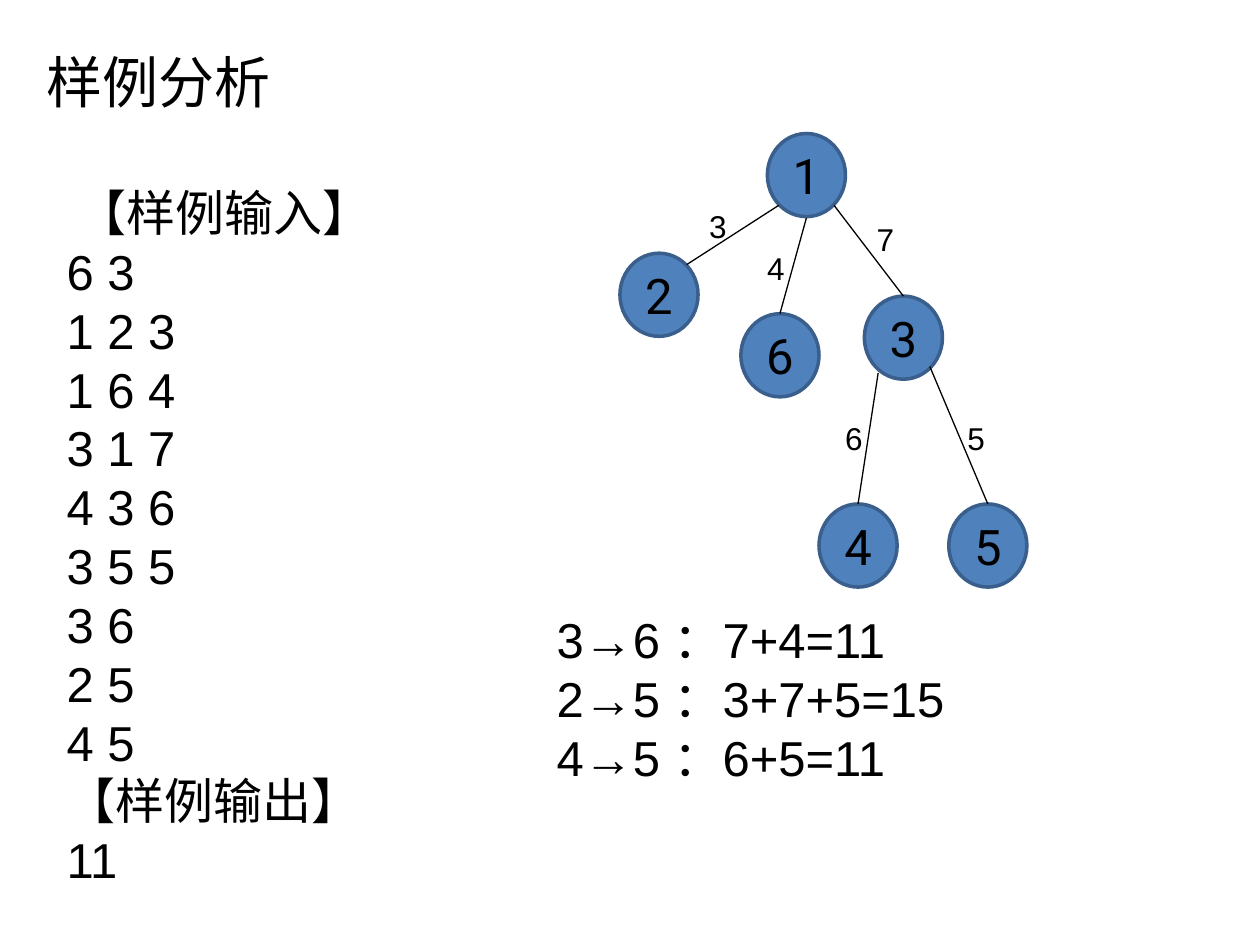
from pptx import Presentation
from pptx.dml.color import RGBColor
from pptx.enum.shapes import MSO_CONNECTOR, MSO_SHAPE
from pptx.enum.text import MSO_ANCHOR, MSO_AUTO_SIZE, PP_ALIGN
from pptx.oxml.ns import qn
from pptx.util import Inches, Pt
from lxml.etree import SubElement

INPUT_LINES = [
    " 【样例输入】", "6 3", "1 2 3", "1 6 4", "3 1 7", "4 3 6", "3 5 5",
    "3 6", "2 5", "4 5", "【样例输出】", "11",
]
ROUTE_LINES = ["3→6 ：7+4=11", "2→5 ：3+7+5=15", "4→5 ：6+5=11"]
NODES = [
    ("1", 6.09, 1.06), ("2", 4.92, 2.01), ("6", 5.88, 2.49),
    ("3", 6.86, 2.35), ("4", 6.5, 4), ("5", 7.53, 4),
]
EDGES = [
    (6.18, 1.63, 5.45, 2.1), (6.4, 1.73, 6.19, 2.49),
    (6.62, 1.63, 7.17, 2.35), (6.97, 2.96, 6.81, 4),
    (7.38, 2.91, 7.84, 4),
]
WEIGHTS = [
    ("3", 5.53, 1.59), ("4", 5.99, 1.93), ("7", 6.86, 1.7),
    ("6", 6.61, 3.28), ("5", 7.58, 3.28),
]


def color(value):
    return RGBColor.from_string(value)


class TreeSlide:
    """Draws text, tree nodes and edges on one slide in a shared style."""

    ink, node_fill, node_line = "000000", "4F81BD", "3A5F8C"
    text_font, node_font = "Arial", "Roboto"
    node_w, node_h = 0.62, 0.66

    def __init__(self, s):
        self.s = s

    def set_lines(self, tf, lines, size, font, align=PP_ALIGN.LEFT):
        tf.word_wrap = True
        for i, line in enumerate(lines):
            p = tf.paragraphs[0] if i == 0 else tf.add_paragraph()
            p.text = line
            p.alignment = align
            p.font.size = Pt(size)
            p.font.name = font
            p.font.color.rgb = color(self.ink)

    def text(self, lines, x, y, w, h, size=28):
        sp = self.s.shapes.add_textbox(Inches(x), Inches(y), Inches(w), Inches(h))
        self.set_lines(sp.text_frame, lines, size, self.text_font)
        sp.text_frame.auto_size = MSO_AUTO_SIZE.SHAPE_TO_FIT_TEXT

    def node(self, label, x, y):
        sp = self.s.shapes.add_shape(
            MSO_SHAPE.OVAL, Inches(x), Inches(y),
            Inches(self.node_w), Inches(self.node_h))
        sp.shadow.inherit = False
        sp.fill.solid()
        sp.fill.fore_color.rgb = color(self.node_fill)
        sp.line.color.rgb = color(self.node_line)
        sp.line.width = Pt(2)
        sp.text_frame.vertical_anchor = MSO_ANCHOR.MIDDLE
        self.set_lines(sp.text_frame, [label], 28, self.node_font, PP_ALIGN.CENTER)

    def edge(self, *ends):
        line = self.s.shapes.add_connector(
            MSO_CONNECTOR.STRAIGHT, *[Inches(v) for v in ends])
        line.line.color.rgb = color(self.ink)
        line.line.width = Pt(0.75)
        SubElement(line._element.spPr, qn("a:effectLst"))

    def weight(self, label, x, y):
        self.text([label], x, y, 0.41, 0.4, 18)


def main():
    prs = Presentation()
    prs.slide_width, prs.slide_height = Inches(10), Inches(7.5)
    tree = TreeSlide(prs.slides.add_slide(prs.slide_layouts[6]))
    tree.text(INPUT_LINES, 0.43, 1.4, 2.78, 5.7)
    tree.text(["样例分析"], 0.27, 0.33, 6.66, 0.63, 32)
    for node in NODES:
        tree.node(*node)
    for edge in EDGES:
        tree.edge(*edge)
    for weight in WEIGHTS:
        tree.weight(*weight)
    tree.text(ROUTE_LINES, 4.32, 4.79, 3.28, 1.5)
    prs.save("out.pptx")


if __name__ == "__main__":
    main()
